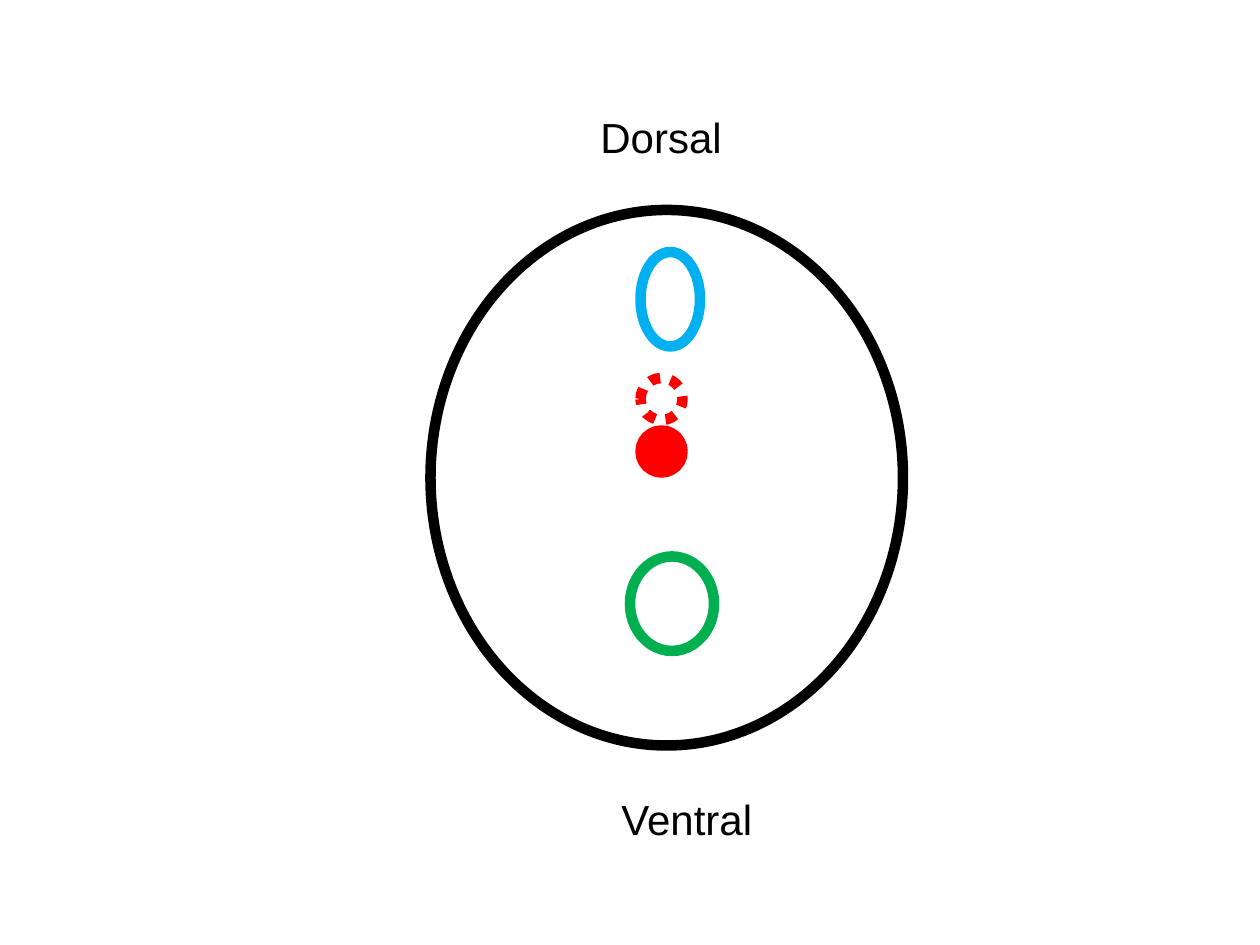
import pptx
import pptx.util
import pptx.dml.color
import pptx.enum.dml
import pptx.enum.shapes
import pptx.enum.text

Pt = pptx.util.Pt
RGBColor = pptx.dml.color.RGBColor
DOTTED = pptx.enum.dml.MSO_LINE.ROUND_DOT  # written as sysDot

BLUE = RGBColor(0x00, 0xB0, 0xF0)
RED = RGBColor(0xFF, 0x00, 0x00)
GREEN = RGBColor(0x00, 0xB0, 0x50)
BLACK = RGBColor(0x00, 0x00, 0x00)

# Ellipses: left, top, width, height, line colour, fill colour, dash
ELLIPSES = [
    (366, 144, 34, 54, BLUE, None, None),
    (366, 216, 24, 24, RED, None, DOTTED),
    (366, 246, 24, 24, RED, RED, None),
    (360, 318, 48, 54, GREEN, None, None),
    (246, 120, 270, 306, BLACK, None, None),
]
# Labels: text, left, top, width, height
LABELS = [
    ("Dorsal", 336, 60, 85, 36),
    ("Ventral", 348, 450, 90, 36),
]

prs = pptx.Presentation()
prs.slide_width, prs.slide_height = Pt(720), Pt(540)
slide = prs.slides.add_slide(prs.slide_layouts[6])

# Body outline and inner structures
for *box, line, fill, dash in ELLIPSES:
    sp = slide.shapes.add_shape(
        pptx.enum.shapes.MSO_SHAPE.OVAL, *map(Pt, box))
    sp.shadow.inherit = False
    sp.line.color.rgb = line
    sp.line.width = Pt(6)
    if dash is not None:
        sp.line.dash_style = dash
    if fill is None:
        sp.fill.background()
    else:
        sp.fill.solid()
        sp.fill.fore_color.rgb = fill

# Direction labels
for text, *box in LABELS:
    tf = slide.shapes.add_textbox(*map(Pt, box)).text_frame
    tf.word_wrap = False
    tf.auto_size = pptx.enum.text.MSO_AUTO_SIZE.SHAPE_TO_FIT_TEXT
    p = tf.paragraphs[0]
    p.text = text
    p.font.name = "Arial"
    p.font.size = Pt(24)
    p.font.color.rgb = BLACK

prs.save("out.pptx")
